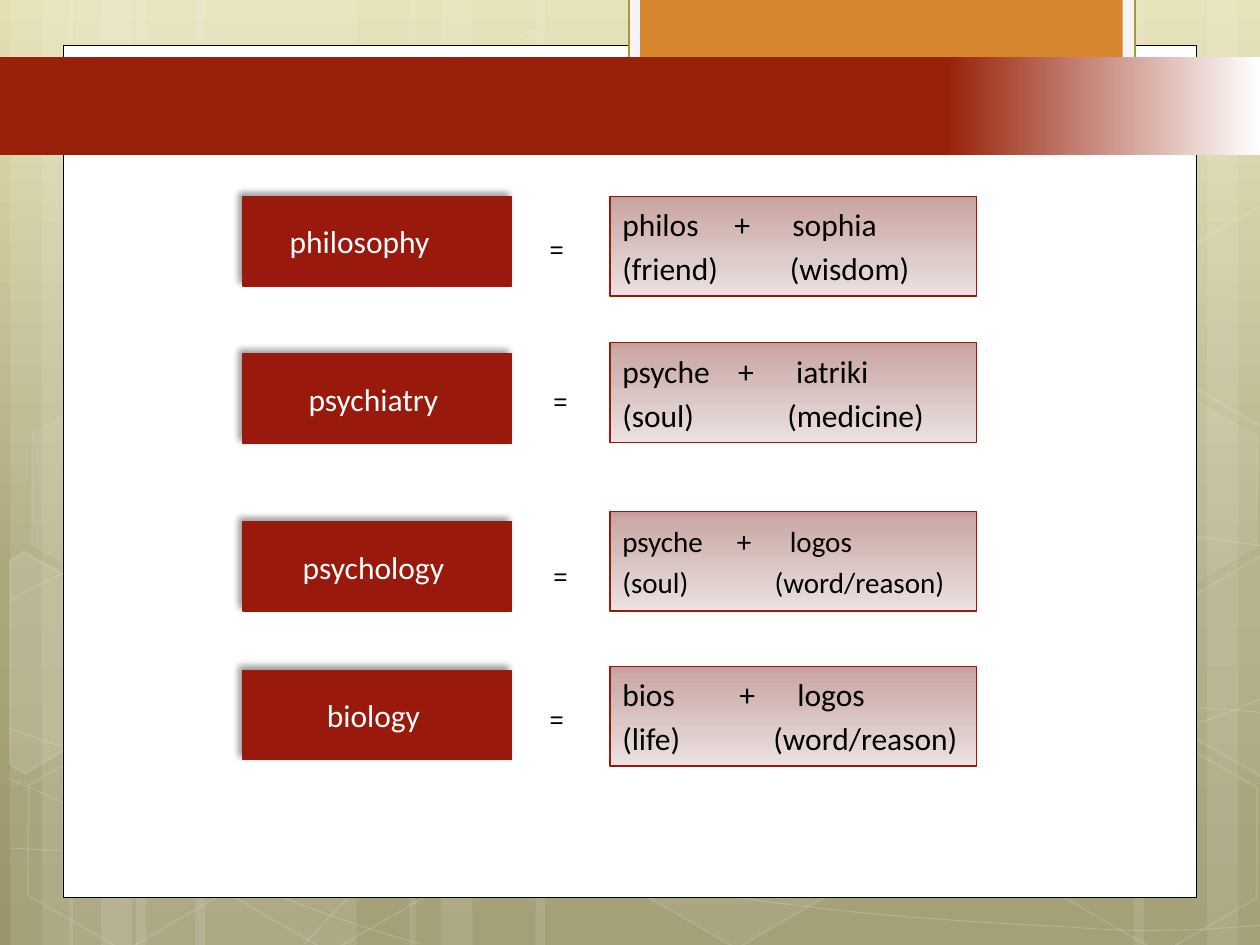
from dataclasses import dataclass

from lxml.etree import SubElement
from pptx import Presentation
from pptx.dml.color import RGBColor
from pptx.enum.shapes import MSO_SHAPE as Preset
from pptx.enum.text import MSO_ANCHOR as Anchor, PP_ALIGN as Align
from pptx.oxml.ns import qn
from pptx.util import Inches, Pt

Point = tuple[float, float]
Stops = tuple[tuple[int, str], ...]


@dataclass(frozen=True)
class Theme:
    white: str = "FFFFFF"
    black: str = "000000"
    term: str = "991A0D"
    tab: str = "D6862D"
    tab_frame: str = "F5F5F5"
    tab_line: str = "A39A36"
    background: Stops = ((0, "E4E0B2"), (62, "ABA77B"), (100, "9A9669"))
    band_fade: Stops = ((0, "FFFFFF"), (25, "972109"), (100, "972109"))
    roots: Stops = ((0, "C39D99"), (9, "CCAAA7"), (39, "D5BBB8"),
                    (50, "D9C4C2"), (67, "DFCECC"), (100, "ECE2E1"))
    body_font: str = "Calibri"
    sign_font: str = "Quicksand"
    size: float = 18
    small_size: float = 16.6


THEME = Theme()


@dataclass(frozen=True)
class Box:
    left: float
    top: float
    width: float
    height: float


@dataclass(frozen=True)
class Outline:
    color: str
    width: float
    opacity: int = 100


@dataclass(frozen=True)
class Hexagon:
    left: float
    top: float
    fill_opacity: int
    line_opacity: int


@dataclass(frozen=True)
class Etymology:
    """A term and its two roots; tab positions are measured from the text edge."""
    term: str
    roots: tuple[str, str]
    meanings: tuple[str, str]
    term_top: float
    roots_top: float
    sign_at: Point
    plus_tab: float
    root_tab: float
    meaning_tab: float
    right_inset: float = 0.16
    size: float = THEME.size


STRIPES = ((1.08, 1.75), (0.08, 0.5), (0.33, 0.83), (1.55, 1.75), (0.55, 0.5), (0.8, 0.83),
           (7.33, 1.75), (9.58, 0.5), (9, 0.83), (4.25, 3.08), (3.25, 0.5), (3.5, 0.83))

# Each curve: a start point, then two control points and an end point per segment.
CURVES = (
    ((0.07, 6.73), (0.61, 6.76), (1.15, 6.79), (1.9, 6.78), (2.65, 6.77), (3.58, 6.75), (4.58, 6.65),
     (5.58, 6.55), (7, 6.36), (7.92, 6.17), (8.83, 5.98), (9.77, 5.68), (10.07, 5.51)),
    ((0.07, 4.77), (0.36, 4.61), (0.65, 4.46), (1.21, 4.31), (1.78, 4.16), (2.59, 3.94), (3.47, 3.87),
     (4.36, 3.8), (5.44, 3.79), (6.54, 3.87), (7.64, 3.95), (9.47, 4.26), (10.07, 4.34)),
    ((0.06, 6.17), (1.27, 6.72), (2.47, 7.27), (3.34, 7.49)),
    ((0.07, 5.78), (0.38, 5.89), (0.7, 6), (1.28, 6.16), (1.86, 6.31), (2.73, 6.56), (3.57, 6.73),
     (4.4, 6.9), (5.45, 7.08), (6.28, 7.18), (7.11, 7.29), (8, 7.33), (8.53, 7.36),
     (9.05, 7.4), (9.19, 7.38), (9.45, 7.38), (9.71, 7.37), (9.89, 7.35), (10.07, 7.34)),
    ((2.42, 7.49), (2.6, 7.29), (2.78, 7.09), (3.02, 6.91), (3.26, 6.73), (3.6, 6.53), (3.88, 6.39),
     (4.16, 6.25), (4.33, 6.19), (4.7, 6.09), (5.06, 5.99), (5.73, 5.85), (6.08, 5.78),
     (6.44, 5.71), (6.49, 5.71), (6.8, 5.69), (7.11, 5.66), (7.6, 5.63), (7.94, 5.62),
     (8.29, 5.61), (8.86, 5.62), (8.86, 5.62), (9.08, 5.62), (9.31, 5.62), (9.53, 5.62),
     (9.71, 5.63), (9.88, 5.64), (10.06, 5.66)),
)

HEXAGONS = (
    Hexagon(3.34, 0.36, 4, 8), Hexagon(4.97, 5.89, 6, 12), Hexagon(0.11, 5.91, 0, 12),
    Hexagon(0.14, 3.12, 7, 8), Hexagon(1.74, 5.92, 0, 12), Hexagon(7.53, 4.53, 10, 12),
    Hexagon(8.34, 5.93, 0, 12), Hexagon(8.34, 3.14, 7, 8),
)

# Hexagons cut off by the slide edge, with their fill opacity.
CUT_HEXAGONS = (
    (((0.08, 4.45), (0.19, 4.38), (0.96, 4.82), (0.95, 5.7), (0.2, 6.14), (0.08, 6.07)), 10),
    (((9.26, 4.85), (10.01, 4.41), (10.09, 4.46), (10.09, 6.13), (10.02, 6.17), (9.26, 5.73)), 4),
    (((9.26, 2.07), (10.01, 1.63), (10.1, 1.68), (10.09, 3.35), (10.02, 3.39), (9.26, 2.95)), 0),
)

ETYMOLOGIES = (
    Etymology("philosophy", ("philos", "sophia"), ("(friend)", "(wisdom)"),
              1.56, 1.56, (4.26, 1.75), 0.89, 1.35, 1.33, right_inset=0.38),
    Etymology("psychiatry", ("psyche", "iatriki"), ("(soul)", "(medicine)"),
              2.81, 2.72, (4.29, 2.96), 0.92, 1.38, 1.31),
    Etymology("psychology", ("psyche", "logos"), ("(soul)", "(word/reason)"),
              4.14, 4.06, (4.29, 4.35), 0.91, 1.33, 1.21, size=THEME.small_size),
    Etymology("biology", ("bios", "logos"), ("(life)", "(word/reason)"),
              5.32, 5.29, (4.26, 5.48), 0.93, 1.39, 1.2),
)


def set_opacity(solid_fill, opacity: int) -> None:
    if opacity < 100:
        SubElement(solid_fill.find(qn("a:srgbClr")), qn("a:alpha")).set("val", str(opacity * 1000))


def set_gradient(fill, owner, stops: Stops, angle: int) -> None:
    """Fill with the stops; the angle runs clockwise, with 90 from top to bottom."""
    fill.gradient()
    fill.gradient_angle = (360 - angle) % 360
    stop_list = owner.find(".//" + qn("a:gsLst"))
    for stop in list(stop_list):
        stop_list.remove(stop)
    for position, color in stops:
        stop = SubElement(stop_list, qn("a:gs"), pos=str(position * 1000))
        SubElement(stop, qn("a:srgbClr"), val=color)


def style_shape(shape, fill: str | Stops | None, outline: Outline | None = None,
                opacity: int = 100, angle: int = 90) -> None:
    shape.shadow.inherit = False
    properties = shape._element.spPr
    if not fill or opacity == 0:
        shape.fill.background()
    elif isinstance(fill, str):
        shape.fill.solid()
        shape.fill.fore_color.rgb = RGBColor.from_string(fill)
        set_opacity(properties.find(qn("a:solidFill")), opacity)
    else:
        set_gradient(shape.fill, properties, fill, angle)
    if outline:
        shape.line.color.rgb = RGBColor.from_string(outline.color)
        shape.line.width = Pt(outline.width)
        set_opacity(properties.find(qn("a:ln")).find(qn("a:solidFill")), outline.opacity)
    else:
        shape.line.fill.background()


def add_preset(slide, preset, box: Box, *style, **options):
    shape = slide.shapes.add_shape(preset, Inches(box.left), Inches(box.top),
                                   Inches(box.width), Inches(box.height))
    style_shape(shape, *style, **options)
    return shape


def add_outline(slide, points: tuple[Point, ...], closed: bool, outline: Outline, opacity: int = 0):
    start, *rest = [(Inches(x), Inches(y)) for x, y in points]
    builder = slide.shapes.build_freeform(*start)
    builder.add_line_segments(rest, close=closed)
    shape = builder.convert_to_shape()
    style_shape(shape, THEME.white, outline, opacity)
    return shape


def bend_segments(shape) -> None:
    """Turn every three straight segments into one cubic Bézier segment."""
    lines = list(shape._element.iter(qn("a:lnTo")))
    for first, second, third in zip(lines[::3], lines[1::3], lines[2::3]):
        curve = first.makeelement(qn("a:cubicBezTo"))
        first.addprevious(curve)
        for line in (first, second, third):
            curve.append(line.find(qn("a:pt")))
            line.getparent().remove(line)


def add_shadow(shape) -> None:
    effects = shape._element.spPr.find(qn("a:effectLst"))
    shadow = SubElement(effects, qn("a:outerShdw"), blurRad=str(Pt(4)), dist=str(Pt(3)),
                        dir=str(225 * 60000), algn="br", rotWithShape="0")
    color = SubElement(shadow, qn("a:srgbClr"), val=THEME.black)
    SubElement(color, qn("a:alpha"), val="40000")


def write_line(paragraph, text: str, font: str, size: float, color: str,
               align=Align.LEFT, tabs: tuple[float, ...] = ()) -> None:
    paragraph.text = text
    paragraph.alignment = align
    paragraph.font.name = font
    paragraph.font.size = Pt(size)
    paragraph.font.color.rgb = RGBColor.from_string(color)
    if tabs:
        default_font = paragraph._p.pPr.find(qn("a:defRPr"))
        tab_list = default_font.makeelement(qn("a:tabLst"))
        default_font.addprevious(tab_list)
        for position in tabs:
            SubElement(tab_list, qn("a:tab"), pos=str(Inches(position)), algn="l")


def draw_backdrop(slide) -> None:
    set_gradient(slide.background.fill, slide._element, THEME.background, 90)
    for left, width in STRIPES:
        add_preset(slide, Preset.RECTANGLE, Box(left, 0, width, 7.5), THEME.white, opacity=10)
    for curve in CURVES:
        bend_segments(add_outline(slide, curve, False, Outline(THEME.white, 0.5, 20)))
    for hexagon in HEXAGONS:
        shape = add_preset(slide, Preset.HEXAGON, Box(hexagon.left, hexagon.top, 1.75, 1.52), THEME.white,
                           Outline(THEME.white, 1, hexagon.line_opacity), opacity=hexagon.fill_opacity)
        shape.adjustments[0] = 0.285
        shape.rotation = 30
    for points, opacity in CUT_HEXAGONS:
        add_outline(slide, points, True, Outline(THEME.white, 1, 12), opacity)


def draw_frame(slide) -> None:
    rectangle = Preset.RECTANGLE
    add_preset(slide, rectangle, Box(0.5, 0.36, 9, 6.76), THEME.white, Outline(THEME.black, 0.5))
    add_preset(slide, rectangle, Box(4.99, -0.02, 4.02, 0.76), THEME.tab_frame, Outline(THEME.tab_line, 1.25))
    add_preset(slide, rectangle, Box(5.08, -0.02, 3.83, 0.68), THEME.tab)
    add_preset(slide, rectangle, Box(0, 0.45, 10, 0.78), THEME.band_fade, angle=180)


def draw_etymology(slide, row: Etymology) -> None:
    outline = Outline(THEME.term, 0.75)
    term = add_preset(slide, Preset.RECTANGLE, Box(1.93, row.term_top, 2.13, 0.71), THEME.term, outline)
    add_shadow(term)
    term.text_frame.margin_right = Inches(row.right_inset)
    term.text_frame.vertical_anchor = Anchor.MIDDLE
    write_line(term.text_frame.paragraphs[0], row.term, THEME.body_font, THEME.size, THEME.white, Align.CENTER)

    roots = add_preset(slide, Preset.RECTANGLE, Box(4.84, row.roots_top, 2.91, 0.79), THEME.roots, outline)
    frame = roots.text_frame
    frame.vertical_anchor = Anchor.MIDDLE
    lines = ((f"{row.roots[0]}\t+\t{row.roots[1]}", (row.plus_tab, row.root_tab)),
             ("\t".join(row.meanings), (row.meaning_tab,)))
    for paragraph, (text, tabs) in zip((frame.paragraphs[0], frame.add_paragraph()), lines):
        paragraph.space_before = Pt(round(row.size * 0.2, 1))
        write_line(paragraph, text, THEME.body_font, row.size, THEME.black, tabs=tabs)

    left, top = row.sign_at
    sign = slide.shapes.add_textbox(Inches(left), Inches(top), Inches(0.39), Inches(0.4))
    sign.text_frame.word_wrap = True
    write_line(sign.text_frame.paragraphs[0], "=", THEME.sign_font, THEME.size, THEME.black)


def main() -> None:
    presentation = Presentation()
    presentation.slide_width, presentation.slide_height = Inches(10), Inches(7.5)
    slide = presentation.slides.add_slide(presentation.slide_layouts[6])
    draw_backdrop(slide)
    draw_frame(slide)
    for row in ETYMOLOGIES:
        draw_etymology(slide, row)
    presentation.save("out.pptx")


if __name__ == "__main__":
    main()
